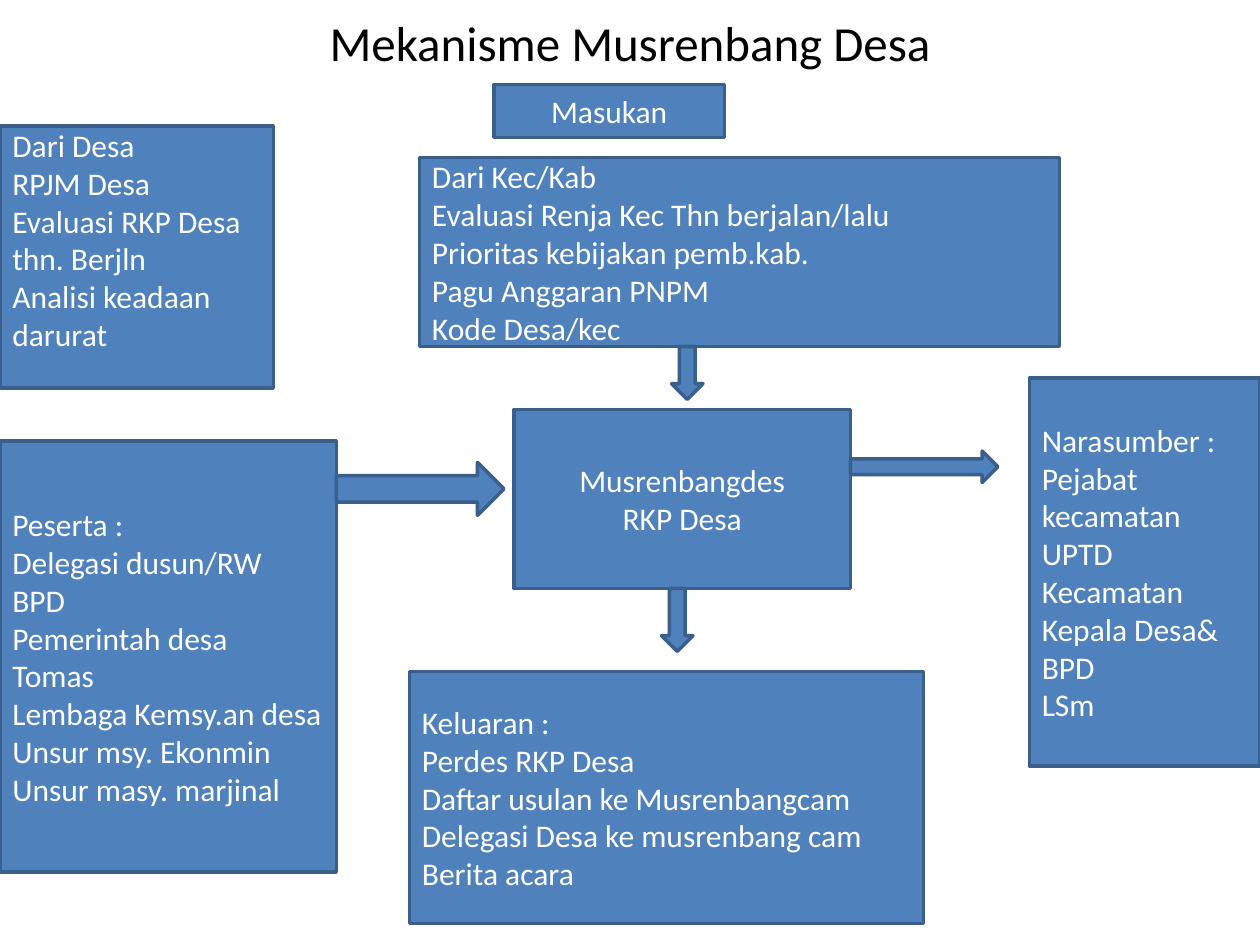
from dataclasses import dataclass

from pptx import Presentation
from pptx.dml.color import RGBColor
from pptx.enum.shapes import MSO_SHAPE
from pptx.enum.text import MSO_ANCHOR, PP_ALIGN
from pptx.util import Inches, Pt

RECT = MSO_SHAPE.RECTANGLE
RIGHT = MSO_SHAPE.RIGHT_ARROW
DOWN = MSO_SHAPE.DOWN_ARROW
TOP, MIDDLE = MSO_ANCHOR.TOP, MSO_ANCHOR.MIDDLE
LEFT, CENTER = PP_ALIGN.LEFT, PP_ALIGN.CENTER


@dataclass(frozen=True)
class Theme:
    font: str = "Calibri"
    title_size: int = 28
    body_size: int = 18
    line_width: int = 2
    fill: RGBColor = RGBColor(0x4F, 0x81, 0xBD)
    line: RGBColor = RGBColor(0x3A, 0x5F, 0x8C)
    title: RGBColor = RGBColor(0, 0, 0)
    body: RGBColor = RGBColor(0xFF, 0xFF, 0xFF)


@dataclass(frozen=True)
class Place:
    left: float
    top: float
    width: float
    height: float

    def lengths(self) -> tuple:
        return tuple(map(Inches, (self.left, self.top, self.width, self.height)))


@dataclass(frozen=True)
class Box:
    place: Place
    lines: tuple[str, ...]
    align: PP_ALIGN = LEFT
    anchor: MSO_ANCHOR = MIDDLE


@dataclass(frozen=True)
class Arrow:
    place: Place
    kind: MSO_SHAPE


THEME = Theme()

BOXES = (
    Box(Place(3.92, 0.67, 1.83, 0.42), ("Masukan",), CENTER),
    Box(Place(0, 1, 2.17, 2.08),
        ("Dari Desa", "RPJM Desa", "Evaluasi RKP Desa thn. Berjln",
         "Analisi keadaan darurat"), anchor=TOP),
    Box(Place(3.33, 1.25, 5.08, 1.5),
        ("Dari Kec/Kab", "Evaluasi Renja Kec Thn berjalan/lalu",
         "Prioritas kebijakan pemb.kab.", "Pagu Anggaran PNPM", "Kode Desa/kec")),
    Box(Place(0, 3.5, 2.67, 3.42),
        ("Peserta :", "Delegasi dusun/RW", "BPD", "Pemerintah desa", "Tomas",
         "Lembaga Kemsy.an desa", "Unsur msy. Ekonmin", "Unsur masy. marjinal")),
    Box(Place(8.17, 3, 1.83, 3.08),
        ("Narasumber :", "Pejabat kecamatan", "UPTD Kecamatan",
         "Kepala Desa& BPD", "LSm")),
    Box(Place(3.25, 5.33, 4.08, 2),
        ("Keluaran :", "Perdes RKP Desa", "Daftar usulan ke Musrenbangcam",
         "Delegasi Desa ke musrenbang cam", "Berita acara")),
    Box(Place(4.08, 3.25, 2.67, 1.42), ("Musrenbangdes", "RKP Desa"), CENTER),
)

ARROWS = (
    Arrow(Place(2.67, 3.67, 1.33, 0.42), RIGHT),
    Arrow(Place(6.75, 3.58, 1.17, 0.25), RIGHT),
    Arrow(Place(5.33, 2.75, 0.25, 0.42), DOWN),
    Arrow(Place(5.25, 4.67, 0.25, 0.5), DOWN),
)


def write_lines(tf, lines: tuple[str, ...], align: PP_ALIGN, size: int,
                color: RGBColor) -> None:
    for i, line in enumerate(lines):
        p = tf.add_paragraph() if i else tf.paragraphs[0]
        p.alignment = align
        r = p.add_run()
        r.text = line
        r.font.name = THEME.font
        r.font.size = Pt(size)
        r.font.color.rgb = color


def add_title(s, text: str, place: Place) -> None:
    sp = s.shapes.title
    sp.left, sp.top, sp.width, sp.height = place.lengths()
    sp.text_frame.vertical_anchor = MIDDLE
    write_lines(sp.text_frame, (text,), CENTER, THEME.title_size, THEME.title)


def add_filled(s, kind: MSO_SHAPE, place: Place):
    sp = s.shapes.add_shape(kind, *place.lengths())
    sp.shadow.inherit = False
    sp.fill.solid()
    sp.fill.fore_color.rgb = THEME.fill
    sp.line.color.rgb = THEME.line
    sp.line.width = Pt(THEME.line_width)
    return sp


def add_box(s, box: Box) -> None:
    tf = add_filled(s, RECT, box.place).text_frame
    tf.word_wrap = True
    tf.vertical_anchor = box.anchor
    if box.anchor == TOP:
        tf.margin_top = 0
    write_lines(tf, box.lines, box.align, THEME.body_size, THEME.body)


def main() -> None:
    prs = Presentation()
    prs.slide_width, prs.slide_height = Inches(10), Inches(7.5)
    s = prs.slides.add_slide(prs.slide_layouts[5])
    add_title(s, "Mekanisme Musrenbang Desa", Place(0.5, 0, 9, 0.67))
    for box in BOXES:
        add_box(s, box)
    for arrow in ARROWS:
        add_filled(s, arrow.kind, arrow.place)
    prs.save("out.pptx")


if __name__ == "__main__":
    main()
